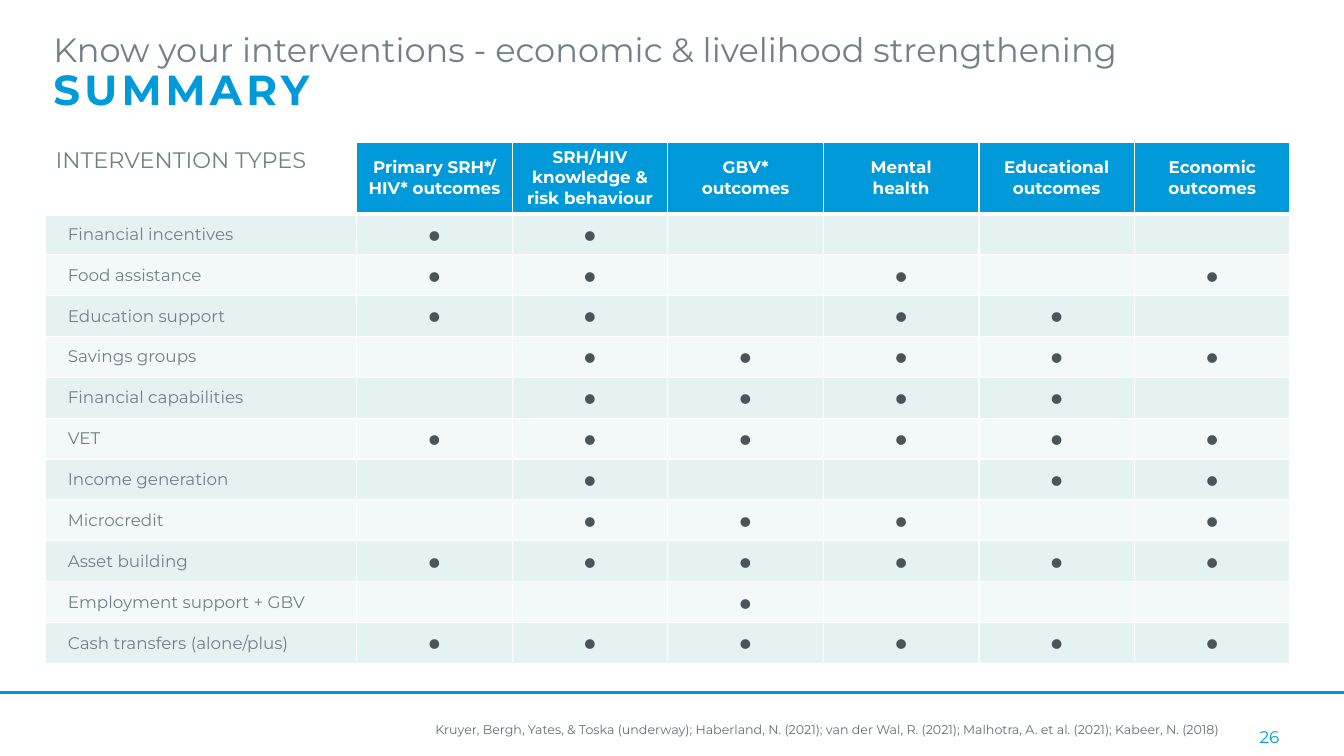
from lxml import etree
from pptx import Presentation
from pptx.dml.color import RGBColor
from pptx.enum.shapes import MSO_CONNECTOR
from pptx.enum.text import MSO_ANCHOR, PP_ALIGN
from pptx.oxml.ns import qn
from pptx.util import Cm, Pt

LEFT, MID, RIGHT = PP_ALIGN.LEFT, PP_ALIGN.CENTER, PP_ALIGN.RIGHT
TOP, CENTER = MSO_ANCHOR.TOP, MSO_ANCHOR.MIDDLE
STRAIGHT = MSO_CONNECTOR.STRAIGHT

HUES = {
    "blue": "009ADA", "grey": "72808A", "cite": "626E77", "dot": "4B545B",
    "white": "FFFFFF", "odd": "E4F3F1", "even": "F2F9F8",
}
HEADS = [
    "Primary SRH*/ HIV* outcomes", "SRH/HIV knowledge & risk behaviour",
    "GBV*\voutcomes", "Mental\vhealth", "Educational\voutcomes",
    "Economic\voutcomes",
]
MARKS = {
    "Financial incentives": "●●----",
    "Food assistance": "●●-●-●",
    "Education support": "●●-●●-",
    "Savings groups": "-●●●●●",
    "Financial capabilities": "-●●●●-",
    "VET": "●●●●●●",
    "Income generation": "-●--●●",
    "Microcredit": "-●●●-●",
    "Asset building": "●●●●●●",
    "Employment support + GBV": "--●---",
    "Cash transfers (alone/plus)": "●●●●●●",
}
DOT = "⦁"


class Deck:
    """Holds the style and the current slide."""

    def __init__(self):
        self.prs = Presentation()
        self.put(self.prs, {"slide_width": Cm(33.87), "slide_height": Cm(19.05)})
        self.slide = self.prs.slides.add_slide(self.prs.slide_layouts[5])

    def put(self, item, vals):
        for name, val in vals.items():
            setattr(item, name, val)

    def hue(self, name):
        return RGBColor.from_string(HUES[name])

    def style(self, para, text, size, hue, bold=False, align=LEFT):
        para.text = text
        para.alignment = align
        for run in para.runs:
            self.put(run.font, {"name": "Montserrat", "size": Pt(size), "bold": bold})
            run.font.color.rgb = self.hue(hue)

    def title(self, box, lead, main):
        shape = self.slide.shapes.title
        self.put(shape, box)
        frame = shape.text_frame
        self.put(frame, {"word_wrap": True, "vertical_anchor": TOP})
        self.style(frame.paragraphs[0], lead, 24, "grey")
        para = frame.add_paragraph()
        self.style(para, main, 30, "blue", True)
        para.line_spacing = 0.9
        para.runs[0].font._element.set("spc", "300")

    def text(self, box, text, size, hue, align=LEFT, anchor=TOP):
        frame = self.slide.shapes.add_textbox(*box).text_frame
        self.put(frame, {"word_wrap": True, "vertical_anchor": anchor})
        self.style(frame.paragraphs[0], text, size, hue, align=align)

    def rule(self, y):
        line = self.slide.shapes.add_connector(STRAIGHT, 0, y, self.prs.slide_width, y)
        line.line.color.rgb = self.hue("blue")
        line.line.width = Pt(2)
        etree.SubElement(line._element.spPr, qn("a:effectLst"))

    def edges(self, cell, widths):
        props = cell._tc.get_or_add_tcPr()
        for side, width in widths.items():
            edge = etree.SubElement(props, qn(f"a:ln{side}"), w=str(Pt(width)))
            fill = etree.SubElement(edge, qn("a:solidFill"))
            etree.SubElement(fill, qn("a:srgbClr"), val=HUES["white"])

    def cell(self, cell, text, fill, size, hue, bold=False, align=LEFT, **form):
        self.put(cell, form)
        cell.fill.solid()
        cell.fill.fore_color.rgb = self.hue(fill)
        if text:
            self.style(cell.text_frame.paragraphs[0], text, size, hue, bold, align)

    def grid(self, left, top, first, wide, head, high):
        rows, cols = len(MARKS) + 1, len(HEADS) + 1
        size = (first + wide * (cols - 1), head + high * (rows - 1))
        table = self.slide.shapes.add_table(rows, cols, left, top, *size).table
        self.put(table, {"first_row": False, "horz_banding": False})
        for i, col in enumerate(table.columns):
            col.width = wide if i else first
        for i, row in enumerate(table.rows):
            row.height = high if i else head
            for cell in row.cells:
                self.edges(cell, {"L": 1, "R": 1, "T": 3 if i == 1 else 1, "B": 1 if i else 3})
        self.cell(table.cell(0, 0), "INTERVENTION TYPES", "white", 16, "grey",
                  margin_right=Cm(0.2))
        for j, text in enumerate(HEADS, 1):
            self.cell(table.cell(0, j), text, "blue", 12, "white", True, MID,
                      vertical_anchor=CENTER)
        for i, (name, marks) in enumerate(MARKS.items(), 1):
            fill = "odd" if i % 2 else "even"
            self.cell(table.cell(i, 0), name, fill, 12, "grey",
                      vertical_anchor=CENTER, margin_left=Cm(0.56))
            for j, mark in enumerate(marks, 1):
                self.cell(table.cell(i, j), DOT if mark == "●" else "", fill, 16,
                          "dot", align=MID, vertical_anchor=CENTER)


def main():
    deck = Deck()
    deck.rule(Cm(17.45))
    deck.title(
        {"left": Cm(1.09), "top": Cm(0.61), "width": Cm(33.25), "height": Cm(2.44)},
        "Know your interventions - economic & livelihood strengthening", "SUMMARY")
    deck.grid(Cm(1.15), Cm(3.58), Cm(7.84), Cm(3.92), Cm(1.78), Cm(1.03))
    deck.text(
        (Cm(10.72), Cm(18.06), Cm(24.16), Cm(0.64)),
        "Kruyer, Bergh, Yates, & Toska (underway); Haberland, N. (2021); "
        "van der Wal, R. (2021); Malhotra, A. et al. (2021); Kabeer, N. (2018)",
        9, "cite")
    deck.text((Cm(24.87), Cm(18.06), Cm(7.62), Cm(1.02)), "26", 12, "blue", RIGHT, CENTER)
    deck.prs.save("out.pptx")


if __name__ == "__main__":
    main()
